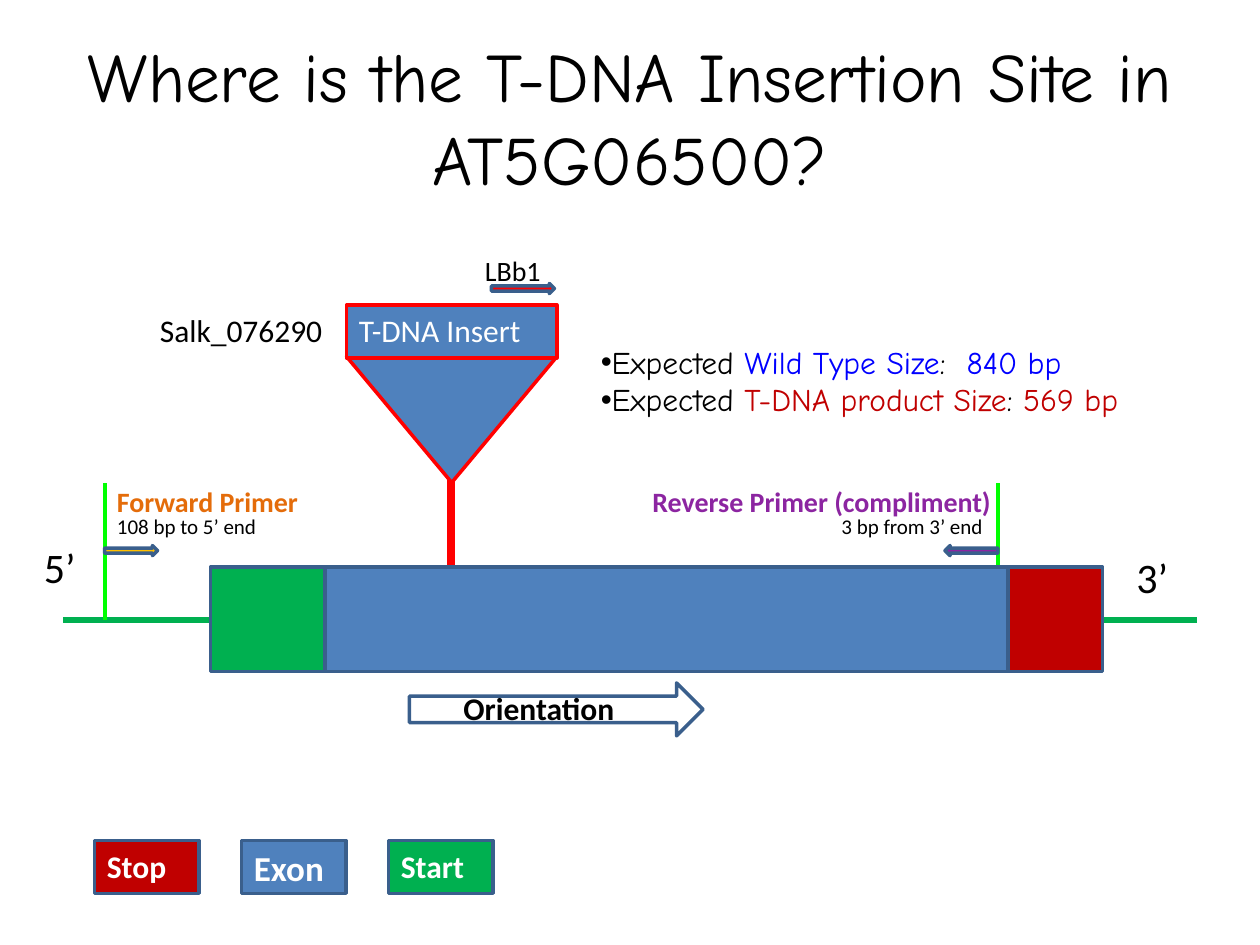
from lxml import etree
from pptx import Presentation
from pptx.dml.color import RGBColor
from pptx.enum.shapes import MSO_CONNECTOR, MSO_SHAPE
from pptx.enum.text import MSO_ANCHOR, PP_ALIGN
from pptx.oxml.ns import qn
from pptx.util import Inches, Pt

BLACK = RGBColor(0x00, 0x00, 0x00)
WHITE = RGBColor(0xFF, 0xFF, 0xFF)
GREEN = RGBColor(0x00, 0xB0, 0x50)
LIME = RGBColor(0x00, 0xFF, 0x00)
DARK_RED = RGBColor(0xC0, 0x00, 0x00)
RED = RGBColor(0xFF, 0x00, 0x00)
BLUE = RGBColor(0x4F, 0x81, 0xBD)
OUTLINE = RGBColor(0x3A, 0x5F, 0x8C)
BRIGHT_BLUE = RGBColor(0x00, 0x00, 0xFF)
GOLD = RGBColor(0xFF, 0xC0, 0x00)
ORANGE = RGBColor(0xE4, 0x6C, 0x0A)
PURPLE = RGBColor(0x8C, 0x25, 0xA1)

presentation = Presentation()
presentation.slide_width = Inches(10)
presentation.slide_height = Inches(7.5)
slide = presentation.slides.add_slide(presentation.slide_layouts[6])


def add_block(kind, left, top, width, height, fill, outline=OUTLINE, rotation=0):
    shape = slide.shapes.add_shape(
        kind, Inches(left), Inches(top), Inches(width), Inches(height))
    shape.shadow.inherit = False
    shape.fill.solid()
    shape.fill.fore_color.rgb = fill
    shape.line.color.rgb = outline
    shape.line.width = Pt(2)
    shape.rotation = rotation


def add_text(left, top, width, height, paragraphs, size, bold=False, font="Calibri"):
    box = slide.shapes.add_textbox(
        Inches(left), Inches(top), Inches(width), Inches(height))
    frame = box.text_frame
    frame.word_wrap = True
    for index, runs in enumerate(paragraphs):
        paragraph = frame.add_paragraph() if index else frame.paragraphs[0]
        for text, color in runs:
            run = paragraph.add_run()
            run.text = text
            run.font.name = font
            run.font.size = Pt(size)
            run.font.bold = bold
            run.font.color.rgb = color
    return frame


title = add_text(0.5, 0.3, 9, 1.25,
                 [[("Where is the T-DNA Insertion Site in AT5G06500?", BLACK)]],
                 39.6, font="Comic Neue")
title.vertical_anchor = MSO_ANCHOR.MIDDLE
title.paragraphs[0].alignment = PP_ALIGN.CENTER

for x1, y1, x2, y2, color, width in [
    (0.5, 4.92, 9.5, 4.92, GREEN, 3),
    (3.58, 4.92, 3.58, 3, RED, 4.5),
    (7.92, 4.75, 7.92, 3.83, LIME, 2.25),
    (0.83, 4.92, 0.83, 3.83, LIME, 2.25),
]:
    connector = slide.shapes.add_connector(
        MSO_CONNECTOR.STRAIGHT, Inches(x1), Inches(y1), Inches(x2), Inches(y2))
    connector.line.color.rgb = color
    connector.line.width = Pt(width)
    etree.SubElement(connector._element.spPr, qn("a:effectLst"))

for left, width, fill in [(1.67, 0.92, GREEN), (7.92, 0.83, DARK_RED), (2.58, 5.42, BLUE)]:
    add_block(MSO_SHAPE.RECTANGLE, left, 4.5, width, 0.83, fill)

add_block(MSO_SHAPE.ISOSCELES_TRIANGLE, 2.75, 2.83, 1.67, 1, BLUE, RED, 180)
add_block(MSO_SHAPE.RECTANGLE, 2.75, 2.42, 1.67, 0.42, BLUE, RED)

for left, top, width, height, fill, rotation in [
    (3.25, 5.42, 2.33, 0.42, WHITE, 0),
    (0.83, 4.33, 0.42, 0.08, GOLD, 0),
    (7.5, 4.33, 0.42, 0.08, PURPLE, 180),
    (3.9, 2.25, 0.5, 0.08, RED, 0),
]:
    add_block(MSO_SHAPE.RIGHT_ARROW, left, top, width, height, fill, rotation=rotation)

for index, (name, fill, size) in enumerate(
        [("Stop", DARK_RED, 18), ("Exon", BLUE, 20), ("Start", GREEN, 18)]):
    left = 0.75 + index * 7 / 6
    add_block(MSO_SHAPE.RECTANGLE, left, 6.67, 0.83, 0.42, fill)
    add_text(left, 6.67, 1.17, 0.4, [[(name, WHITE)]], size, True)

for text, left, top, width, height, size, bold, color in [
    ("3’", 8.92, 4.33, 0.58, 0.5, 24, False, BLACK),
    ("5’", 0.25, 4.25, 0.5, 0.5, 24, False, BLACK),
    ("Orientation", 3.58, 5.42, 2.33, 0.4, 18, True, BLACK),
    ("T-DNA Insert", 2.75, 2.42, 1.75, 0.4, 18, False, WHITE),
    ("Salk_076290", 1.17, 2.42, 1.92, 0.42, 18, False, BLACK),
    ("Forward Primer", 0.83, 3.8, 1.83, 0.37, 16, True, ORANGE),
    ("108 bp to 5’ end", 0.83, 4.03, 1.67, 0.3, 12, False, BLACK),
    ("Reverse Primer (compliment)", 5.08, 3.8, 2.92, 0.37, 16, True, PURPLE),
    ("3 bp from 3’ end", 6.58, 4.03, 1.67, 0.3, 12, False, BLACK),
]:
    add_text(left, top, width, height, [[(text, color)]], size, bold)

primer_label = add_text(3.75, 1.96, 0.65, 0.37, [[("LBb1", BLACK)]], 16)
primer_label.word_wrap = False

sizes = add_text(4.67, 2.67, 5, 0.71, [
    [("Expected ", BLACK), ("Wild Type Size", BRIGHT_BLUE),
     (": ", BLACK), (" 840 bp", BRIGHT_BLUE)],
    [("Expected ", BLACK), ("T-DNA product Size", DARK_RED),
     (":", BLACK), (" 569 bp", DARK_RED)],
], 18, font="Comic Neue")
for paragraph in sizes.paragraphs:
    properties = paragraph._p.get_or_add_pPr()
    etree.SubElement(properties, qn("a:buFont"), typeface="Arial")
    etree.SubElement(properties, qn("a:buChar"), char="•")

presentation.save("out.pptx")
